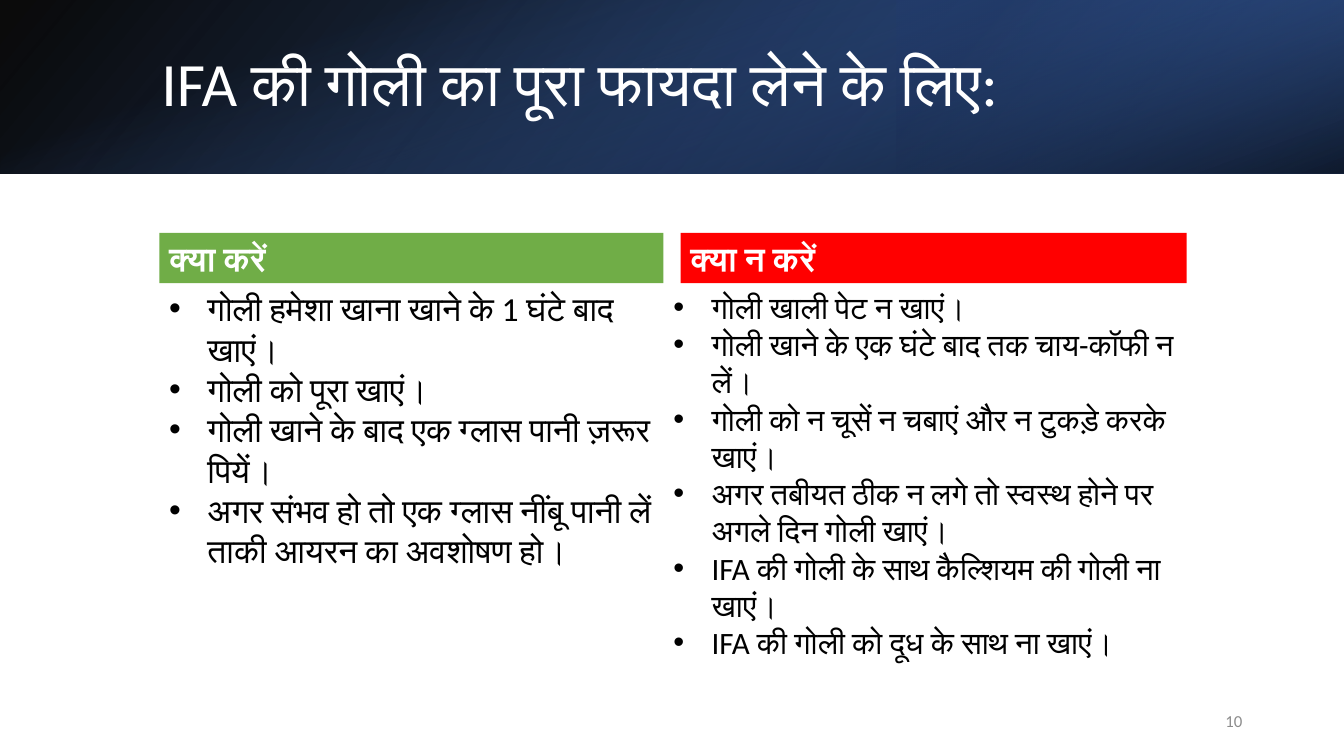
from dataclasses import dataclass

from lxml import etree
from pptx import Presentation
from pptx.dml.color import RGBColor
from pptx.enum.shapes import MSO_SHAPE
from pptx.enum.text import MSO_ANCHOR, MSO_AUTO_SIZE, PP_ALIGN
from pptx.oxml.ns import qn
from pptx.util import Inches, Pt

RECTANGLE = MSO_SHAPE.RECTANGLE
TOP, MIDDLE = MSO_ANCHOR.TOP, MSO_ANCHOR.MIDDLE
LEFT, RIGHT = PP_ALIGN.LEFT, PP_ALIGN.RIGHT
NO_AUTOFIT = MSO_AUTO_SIZE.NONE

SLIDE_WIDTH, SLIDE_HEIGHT, BANNER_HEIGHT = 13.33, 7.5, 1.72
TITLE = "IFA की गोली का पूरा फायदा लेने के लिए:"
PAGE_NUMBER = "10"
BANNER_LAYERS = [
    {"box": (0, 0, SLIDE_WIDTH, BANNER_HEIGHT), "rotation": 0, "flip": True,
     "angle": 140, "stops": [(0, "000000", 96), (100, "2F5597", 100)]},
    {"box": (8.89, 0, 4.44, BANNER_HEIGHT), "rotation": 180, "flip": True,
     "angle": 320, "stops": [(19, "203864", 68), (100, "4472C4", 79)]},
    {"box": ((SLIDE_WIDTH - BANNER_HEIGHT) / 2, (BANNER_HEIGHT - SLIDE_WIDTH) / 2,
             BANNER_HEIGHT, SLIDE_WIDTH), "rotation": 90, "flip": False,
     "angle": 340, "stops": [(23, "4472C4", 0), (99, "000000", 74)]},
]
COLUMNS = [
    {"heading": "क्या करें", "fill": "70AD47", "size": 24,
     "heading_box": (1.58, 2.31, 5, 0.5), "list_box": (1.58, 2.81, 5, 3.57),
     "points": [
         "गोली हमेशा खाना खाने के 1 घंटे बाद खाएं।",
         "गोली को पूरा खाएं।",
         "गोली खाने के बाद एक ग्लास पानी ज़रूर पियें।",
         "अगर संभव हो तो एक ग्लास नींबू पानी लें ताकी आयरन का अवशोषण हो।",
     ]},
    {"heading": "क्या न करें", "fill": "FF0000", "size": 22.2,
     "heading_box": (6.75, 2.31, 5.02, 0.5), "list_box": (6.58, 2.81, 5.57, 4.08),
     "points": [
         "गोली खाली पेट न खाएं।",
         "गोली खाने के एक घंटे बाद तक चाय-कॉफी न लें।",
         "गोली को न चूसें न चबाएं और न टुकड़े करके खाएं।",
         "अगर तबीयत ठीक न लगे तो स्वस्थ होने पर अगले दिन गोली खाएं।",
         "IFA की गोली के साथ कैल्शियम की गोली ना खाएं।",
         "IFA की गोली को दूध के साथ ना खाएं।",
     ]},
]


@dataclass(frozen=True)
class Theme:
    font: str = "Calibri"
    light: str = "FFFFFF"
    dark: str = "000000"
    muted: str = "8C8C8C"
    title_size: float = 44
    heading_size: float = 24
    number_size: float = 12
    line_ratio: float = 1.2
    bullet_indent: float = 0.38


THEME = Theme()


def inches(box):
    return [Inches(length) for length in box]


def write(shape, lines, size, color, align=LEFT, anchor=MIDDLE, bold=False):
    frame = shape.text_frame
    frame.text = "\n".join(lines)
    frame.word_wrap = True
    frame.auto_size = NO_AUTOFIT
    frame.vertical_anchor = anchor
    for para in frame.paragraphs:
        para.alignment = align
        for span in para.runs:
            font = span.font
            font.name, font.size, font.bold = THEME.font, Pt(size), bold
            font.color.rgb = RGBColor.from_string(color)
            complex_font = etree.SubElement(font._element, qn("a:cs"))
            complex_font.set("typeface", THEME.font)


def add_rectangle(page, box):
    shape = page.shapes.add_shape(RECTANGLE, *inches(box))
    shape.shadow.inherit = False
    shape.line.fill.background()
    return shape


def add_banner_layer(page, layer):
    shape = add_rectangle(page, layer["box"])
    shape.rotation = layer["rotation"]
    properties = shape._element.spPr
    if layer["flip"]:
        properties.find(qn("a:xfrm")).set("flipH", "1")
    shape.fill.gradient()
    shape.fill.gradient_angle = 360 - layer["angle"]
    for stop, (position, color, _) in zip(shape.fill.gradient_stops, layer["stops"]):
        stop.position = position / 100
        stop.color.rgb = RGBColor.from_string(color)
    colors = properties.find(qn("a:gradFill")).iter(qn("a:srgbClr"))
    for element, (_, _, opacity) in zip(colors, layer["stops"]):
        etree.SubElement(element, qn("a:alpha")).set("val", str(opacity * 1000))


def add_bullets(shape, size):
    indent = Inches(THEME.bullet_indent)
    for para in shape.text_frame.paragraphs:
        para.line_spacing = Pt(size * THEME.line_ratio)
        properties = para._p.get_or_add_pPr()
        properties.set("marL", str(indent))
        properties.set("indent", str(-indent))
        etree.SubElement(properties, qn("a:buFont")).set("typeface", "Arial")
        etree.SubElement(properties, qn("a:buChar")).set("char", "•")


def add_column(page, column):
    heading = add_rectangle(page, column["heading_box"])
    heading.fill.solid()
    heading.fill.fore_color.rgb = RGBColor.from_string(column["fill"])
    write(heading, [column["heading"]], THEME.heading_size, THEME.light, bold=True)
    box = page.shapes.add_textbox(*inches(column["list_box"]))
    write(box, column["points"], column["size"], THEME.dark, anchor=TOP)
    add_bullets(box, column["size"])


def main():
    """Build the slide of dos and don'ts for taking IFA tablets."""
    deck = Presentation()
    deck.slide_width, deck.slide_height = Inches(SLIDE_WIDTH), Inches(SLIDE_HEIGHT)
    page = deck.slides.add_slide(deck.slide_layouts[5])
    for layer in BANNER_LAYERS:
        add_banner_layer(page, layer)

    title = page.shapes.title
    title.left, title.top, title.width, title.height = inches((1.5, 0.38, 10.98, 0.96))
    write(title, [TITLE], THEME.title_size, THEME.light)
    title.text_frame.paragraphs[0].line_spacing = 0.9
    page.shapes._spTree.append(title._element)

    for column in COLUMNS:
        add_column(page, column)
    number = page.shapes.add_textbox(*inches((9.42, 6.95, 3, 0.4)))
    write(number, [PAGE_NUMBER], THEME.number_size, THEME.muted, align=RIGHT)
    deck.save("out.pptx")


if __name__ == "__main__":
    main()
